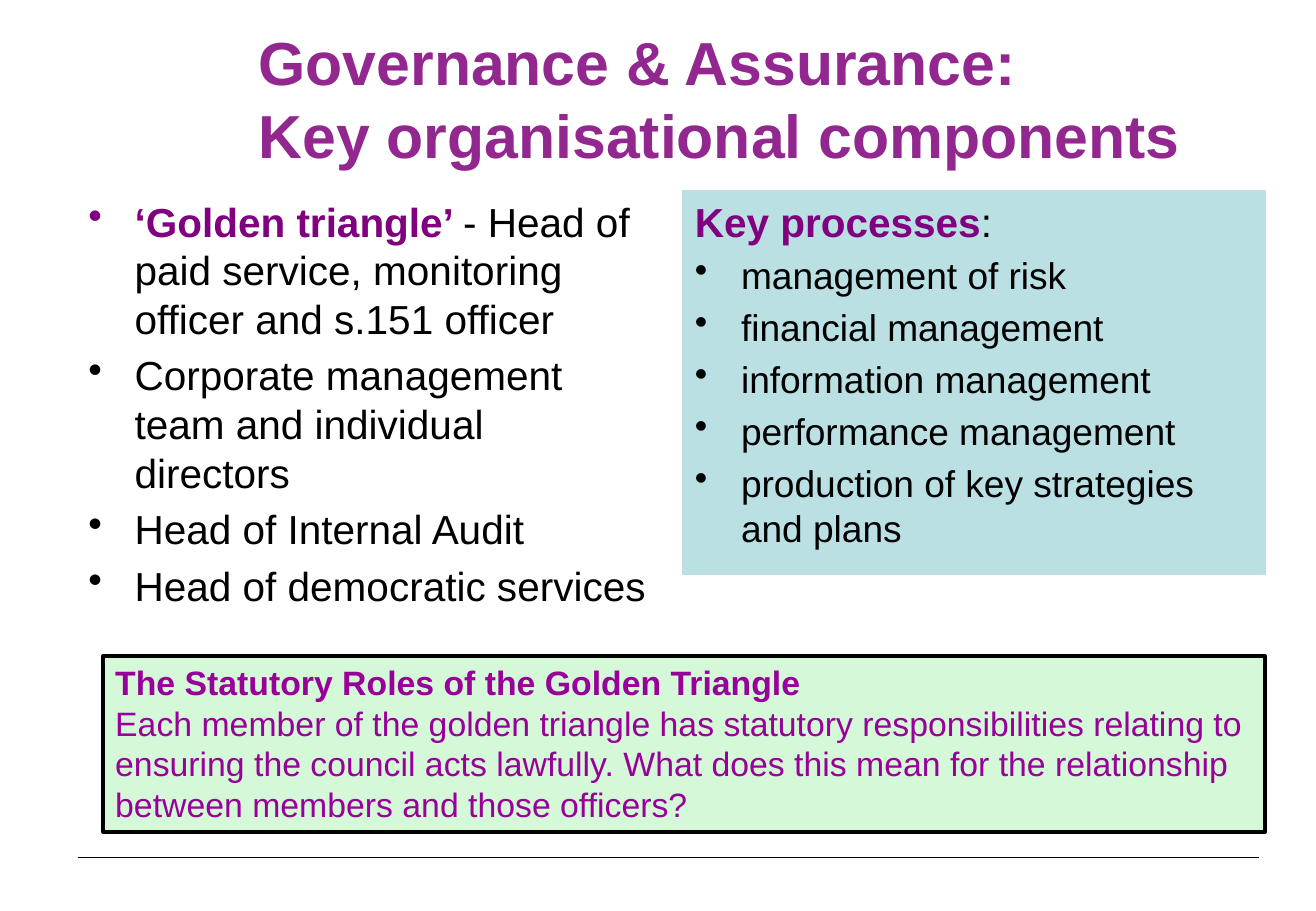
from lxml import etree
from pptx import Presentation
from pptx.dml.color import RGBColor
from pptx.enum import shapes, text
from pptx.oxml import ns
from pptx.util import Inches, Pt

FONT = "Arial"
BLACK = RGBColor(0x00, 0x00, 0x00)
TITLE_PURPLE = RGBColor(0x91, 0x27, 0x8F)
HEADING_PURPLE = RGBColor(0x80, 0x00, 0x80)
ROLES_PURPLE = RGBColor(0x99, 0x00, 0x99)
PALE_BLUE = RGBColor(0xBB, 0xE0, 0xE3)
PALE_GREEN = RGBColor(0xD4, 0xF8, 0xD8)

HANGING = Inches(0.38)

COMPONENTS = [
    "Corporate management team and individual directors",
    "Head of Internal Audit",
    "Head of democratic services",
]
PROCESSES = [
    "management of risk",
    "financial management",
    "information management",
    "performance management",
    "production of key strategies and plans",
]


def add_span(para, words, size, color, bold=False):
    span = para.add_run()
    span.text = words
    span.font.name = FONT
    span.font.size = Pt(size)
    span.font.bold = bold
    span.font.color.rgb = color


def add_bullet(para):
    properties = para._p.get_or_add_pPr()
    properties.set("marL", str(HANGING))
    properties.set("indent", str(-HANGING))
    bullet = etree.SubElement(properties, ns.qn("a:buChar"))
    bullet.set("char", "•")


def add_bullet_items(frame, items, size):
    for item in items:
        para = frame.add_paragraph()
        para.space_before = Pt(size * 0.2)
        add_bullet(para)
        add_span(para, item, size, BLACK)


def add_text_box(page, left, top, width, height):
    box = page.shapes.add_textbox(Inches(left), Inches(top), Inches(width), Inches(height))
    box.text_frame.word_wrap = True
    return box.text_frame


def add_panel(page, left, top, width, height, fill, line, line_width):
    """Add a filled rectangle with left-aligned text and return its text frame."""
    panel = page.shapes.add_shape(
        shapes.MSO_SHAPE.RECTANGLE, Inches(left), Inches(top), Inches(width), Inches(height))
    panel.shadow.inherit = False
    panel.fill.solid()
    panel.fill.fore_color.rgb = fill
    panel.line.color.rgb = line
    panel.line.width = Pt(line_width)
    frame = panel.text_frame
    frame.word_wrap = True
    frame.vertical_anchor = text.MSO_ANCHOR.TOP
    frame.paragraphs[0].alignment = text.PP_ALIGN.LEFT
    return frame


def add_footer_rule(page, left, top, width):
    rule = page.shapes.add_connector(
        shapes.MSO_CONNECTOR.STRAIGHT,
        Inches(left), Inches(top), Inches(left + width), Inches(top))
    rule.line.color.rgb = BLACK
    rule.line.width = Pt(0.75)
    etree.SubElement(rule._element.spPr, ns.qn("a:effectLst"))


def add_title(page, left, top, width, height):
    frame = add_text_box(page, left, top, width, height)
    frame.vertical_anchor = text.MSO_ANCHOR.MIDDLE
    para = frame.paragraphs[0]
    add_span(para, "Governance & Assurance:", 36, TITLE_PURPLE, bold=True)
    para.add_line_break()
    add_span(para, "Key organisational components", 36, TITLE_PURPLE, bold=True)


def add_components(page, left, top, width, height):
    frame = add_text_box(page, left, top, width, height)
    para = frame.paragraphs[0]
    add_bullet(para)
    add_span(para, "‘Golden triangle’ ", 24, HEADING_PURPLE, bold=True)
    add_span(para, "- Head of paid service, monitoring officer and s.151 officer", 24, BLACK)
    add_bullet_items(frame, COMPONENTS, 24)


def add_processes(page, left, top, width, height):
    frame = add_panel(page, left, top, width, height, PALE_BLUE, PALE_BLUE, 0.75)
    para = frame.paragraphs[0]
    add_span(para, "Key processes", 24, HEADING_PURPLE, bold=True)
    add_span(para, ":", 24, BLACK)
    add_bullet_items(frame, PROCESSES, 22)
    for para in frame.paragraphs:
        para.alignment = text.PP_ALIGN.LEFT


def add_statutory_roles(page, left, top, width, height):
    frame = add_panel(page, left, top, width, height, PALE_GREEN, BLACK, 2.25)
    add_span(frame.paragraphs[0], "The Statutory Roles of the Golden Triangle",
             20, ROLES_PURPLE, bold=True)
    para = frame.add_paragraph()
    para.alignment = text.PP_ALIGN.LEFT
    add_span(para, "Each member of the golden triangle has statutory responsibilities "
                   "relating to ensuring the council acts lawfully. What does this mean "
                   "for the relationship between members and those officers?",
             20, ROLES_PURPLE)


def main():
    deck = Presentation()
    deck.slide_width = Inches(10.83)
    deck.slide_height = Inches(7.5)
    page = deck.slides.add_slide(deck.slide_layouts[6])
    add_footer_rule(page, 0.64, 7.06, 9.72)
    add_title(page, 2.03, 0.49, 8.36, 0.63)
    add_components(page, 0.63, 1.57, 4.8, 3.57)
    add_processes(page, 5.62, 1.57, 4.79, 3.16)
    add_statutory_roles(page, 0.85, 5.4, 9.56, 1.45)
    deck.save("out.pptx")


if __name__ == "__main__":
    main()
